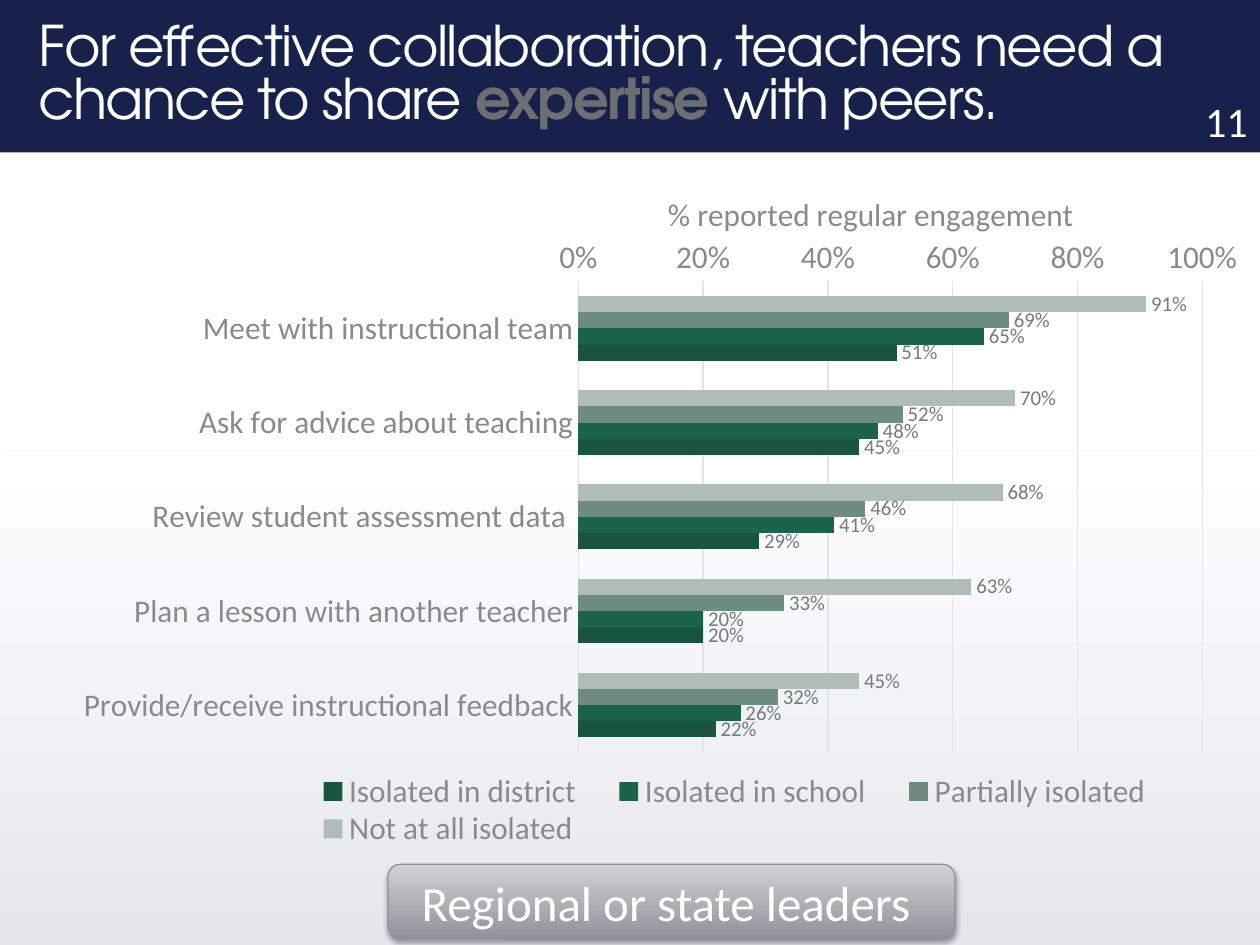
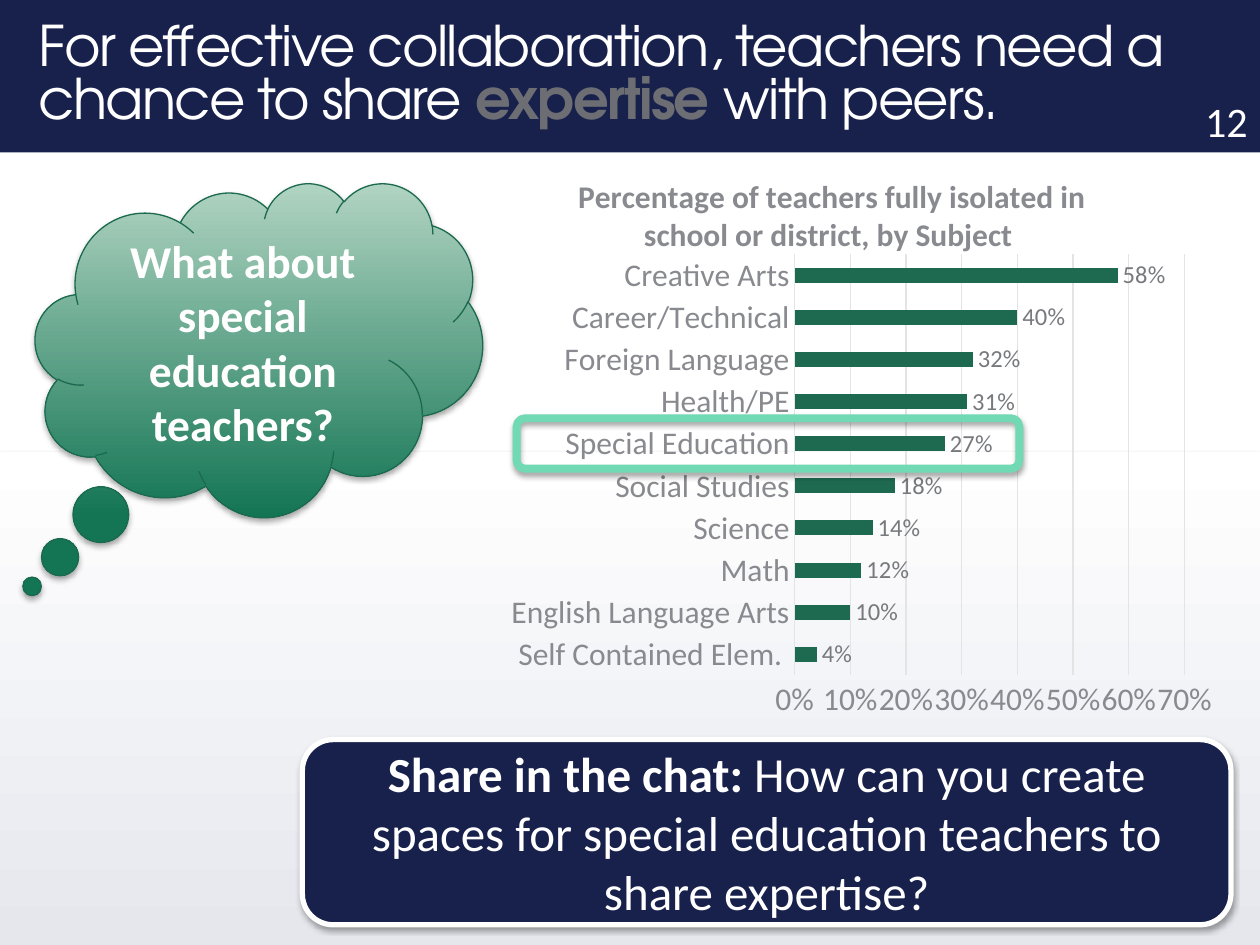
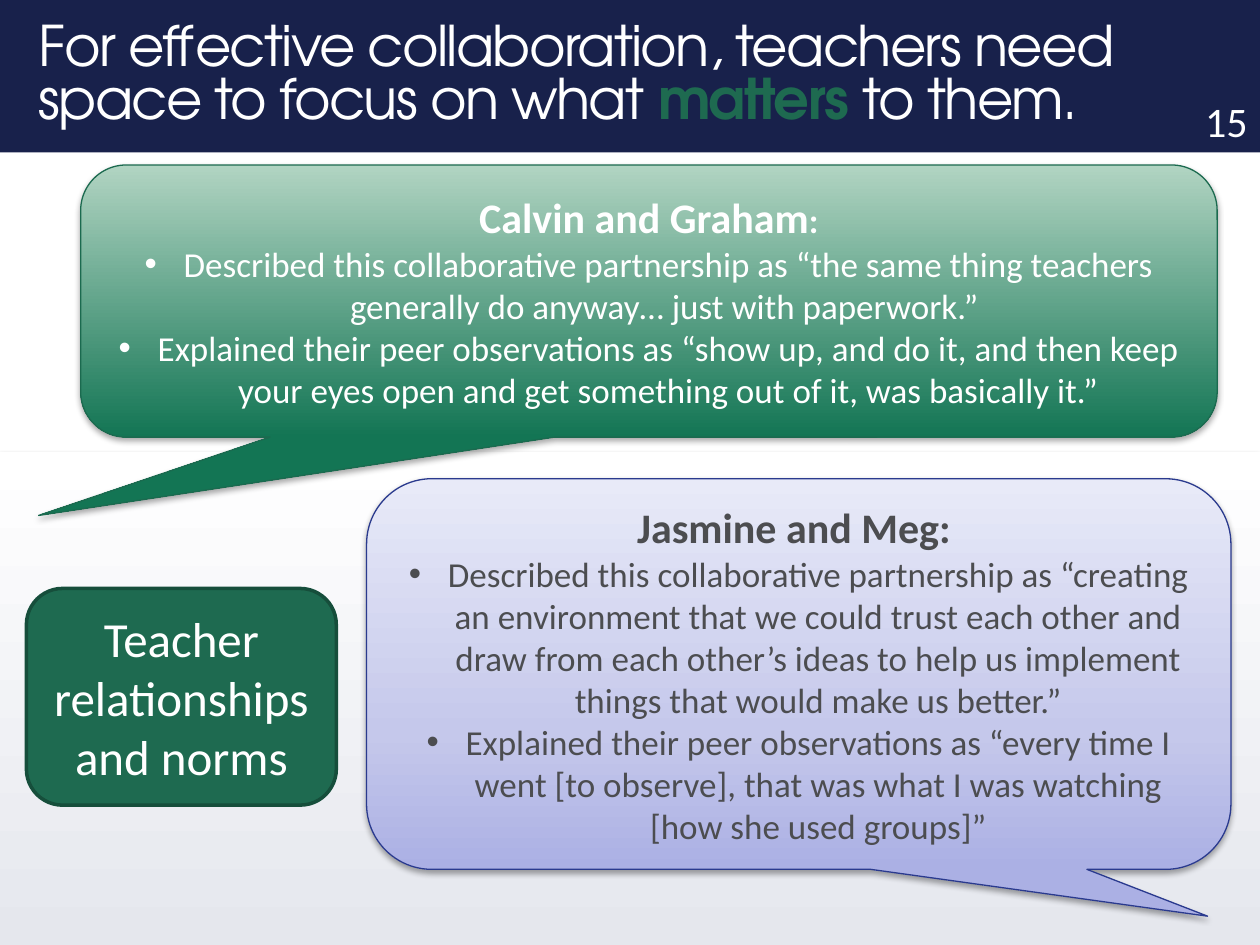
from lxml import etree
from pptx import Presentation
from pptx import util as u
from pptx.chart import data as chart_data
from pptx.dml import color as dml
from pptx.enum import chart as charts, shapes, text
from pptx.oxml import ns

COLORS = {
    "white": "FFFFFF", "mist": "E5E7ED", "navy": "18214B", "gray": "6D6E74",
    "green": "1E6A50", "green edge": "1B6A4F", "dark green": "164E3B",
    "deep green": "137554", "pale green": "B1D4C2", "mint": "72D9B5",
    "silver": "D0D1D6", "steel": "92939A", "steel edge": "909196",
    "pale lilac": "E8EAF8", "mid lilac": "C5C8EB", "lilac": "ABB0E4",
    "blue edge": "2A3A8E", "ink": "4C4D50", "axis": "898A8F",
    "label": "77797D", "grid": "E4E4E5", "not isolated": "B0BCB6",
    "partial": "6F8D7F", "school": "1C634B", "district": "18543F",
}
RGB = {name: dml.RGBColor.from_string(value) for name, value in COLORS.items()}
BODY_FONT, TITLE_FONT = "Calibri", "TeX Gyre Adventor"
SHAPE = shapes.MSO_SHAPE
CENTER, RIGHT = text.PP_ALIGN.CENTER, text.PP_ALIGN.RIGHT

# Slide size and a grid of 100 columns by 75 rows
presentation = Presentation()
presentation.slide_width, presentation.slide_height = u.Inches(10), u.Inches(7.5)
COLUMN = presentation.slide_width // 100
ROW = presentation.slide_height // 75


def add_box(slide, kind, at, fill=(), line=None, shadow=True, adjust=()):
    """Add a shape; fill lists (percent, colour) stops from top to bottom."""
    left, top, width, height = at
    shape = slide.shapes.add_shape(kind, int(left * COLUMN), int(top * ROW),
                                   int(width * COLUMN), int(height * ROW))
    for index, value in enumerate(adjust):
        shape.adjustments[index] = value
    if not fill:
        shape.fill.background()
    elif len(fill) == 1:
        shape.fill.solid()
        shape.fill.fore_color.rgb = RGB[fill[0][1]]
    else:
        shape.fill.gradient()
        shape.fill.gradient_angle = 270
        stops = shape._element.spPr.find(".//" + ns.qn("a:gsLst"))
        for stop in list(stops):
            stops.remove(stop)
        for percent, name in fill:
            stop = etree.SubElement(stops, ns.qn("a:gs"), pos=str(percent * 1000))
            etree.SubElement(stop, ns.qn("a:srgbClr"), val=COLORS[name])
    if line:
        shape.line.color.rgb, shape.line.width = RGB[line[0]], u.Pt(line[1])
    else:
        shape.line.fill.background()
    shape.shadow.inherit = False
    if shadow:
        effects = shape._element.spPr.find(ns.qn("a:effectLst"))
        outer = etree.SubElement(effects, ns.qn("a:outerShdw"), blurRad=str(u.Pt(3.1)),
                                 dist=str(u.Pt(1.8)), dir="5400000", rotWithShape="0")
        tint = etree.SubElement(outer, ns.qn("a:srgbClr"), val="000000")
        etree.SubElement(tint, ns.qn("a:alpha"), val="35000")
    return shape


def write(shape, paragraphs, size, color="white", font=BODY_FONT, align=CENTER):
    """Fill a shape; a paragraph is (bulleted, [(text, run settings), ...])."""
    frame = shape.text_frame
    frame.word_wrap = True
    frame.vertical_anchor = text.MSO_ANCHOR.MIDDLE
    for index, (bulleted, runs) in enumerate(paragraphs):
        paragraph = frame.add_paragraph() if index else frame.paragraphs[0]
        paragraph.alignment = align
        if bulleted:
            properties = paragraph._p.get_or_add_pPr()
            properties.set("marL", str(u.Inches(0.31)))
            properties.set("indent", str(-u.Inches(0.31)))
            etree.SubElement(properties, ns.qn("a:buFont"), typeface="Arial")
            etree.SubElement(properties, ns.qn("a:buChar"), char="•")
        paragraph.font.name, paragraph.font.size = font, u.Pt(size)
        paragraph.font.color.rgb = RGB[color]
        for words, settings in runs:
            run = paragraph.add_run()
            run.text = words
            if "size" in settings:
                run.font.size = u.Pt(settings["size"])
            if "color" in settings:
                run.font.color.rgb = RGB[settings["color"]]
            if "bold" in settings:
                run.font.bold = settings["bold"]


# Shared parts: lower gradient, title band, title and slide number
SHARE_TITLE = ("For effective collaboration, teachers need a chance to share ",
               "expertise ", "with peers.", "gray")
MATTERS_TITLE = ("For effective collaboration, teachers need space to focus on what ",
                 "matters", " to them.", "green")
slides = []
for number, (start, key_word, end, accent) in (
        ("11", SHARE_TITLE), ("12", SHARE_TITLE), ("15", MATTERS_TITLE)):
    slide = presentation.slides.add_slide(presentation.slide_layouts[6])
    slides.append(slide)
    add_box(slide, SHAPE.RECTANGLE, (0, 35.9, 100, 39.1), [(0, "white"), (100, "mist")])
    add_box(slide, SHAPE.RECTANGLE, (0, 0, 100, 12.1), [(0, "navy")], shadow=False)
    title = slide.shapes.add_textbox(int(2.1 * COLUMN), int(2.6 * ROW),
                                     int(97.9 * COLUMN), 7 * ROW)
    write(title, [(False, [(start, {}), (key_word, {"color": accent, "bold": True}),
                           (end, {})])],
          32, font=TITLE_FONT, align=text.PP_ALIGN.LEFT)
    title.text_frame.paragraphs[0].line_spacing = 0.8
    for run in title.text_frame.paragraphs[0].runs:
        run._r.get_or_add_rPr().set("spc", "-100")
    number_box = slide.shapes.add_textbox(int(76.7 * COLUMN), int(7.6 * ROW),
                                          int(23.3 * COLUMN), 4 * ROW)
    write(number_box, [(False, [(number, {})])], 24, align=RIGHT)
engagement_slide, subject_slide, norms_slide = slides

# Bar charts
engagement = {
    "slide": engagement_slide, "at": (2.1, 13.8, 96.1, 53.5),
    "categories": ["Meet with instructional team", "Ask for advice about teaching",
                   "Review student assessment data ",
                   "Plan a lesson with another teacher",
                   "Provide/receive instructional feedback"],
    "series": [("Not at all isolated", "not isolated", (0.91, 0.7, 0.68, 0.63, 0.45)),
               ("Partially isolated", "partial", (0.69, 0.52, 0.46, 0.33, 0.32)),
               ("Isolated in school", "school", (0.65, 0.48, 0.41, 0.2, 0.26)),
               ("Isolated in district", "district", (0.51, 0.45, 0.29, 0.2, 0.22))],
    "maximum": 1, "step": 0.2, "label size": 12, "reverse": True, "legend": True,
    "title": None, "axis title": "% reported regular engagement",
    "layouts": [("c:chart/c:plotArea", 0, (0.46, 0.16, 0.52, 0.7)),
                (".//c:valAx/c:title", 1, (0.53, 0.02)),
                (".//c:legend", 1, (0.22, 0.89, 0.74, 0.11))],
}
subjects = {
    "slide": subject_slide, "at": (38.3, 12.5, 59.4, 46.2),
    "categories": ["Self Contained Elem. ", "English Language Arts", "Math", "Science",
                   "Social Studies", "Special Education", "Health/PE",
                   "Foreign Language", "Career/Technical", "Creative Arts"],
    "series": [("Series 1", "green",
                (0.04, 0.1, 0.12, 0.14, 0.18, 0.27, 0.31, 0.32, 0.4, 0.58))],
    "maximum": 0.7, "step": 0.1, "label size": 14, "reverse": False, "legend": False,
    "title": "Percentage of teachers fully isolated in school or district, by Subject ",
    "axis title": None,
    "layouts": [("c:chart/c:plotArea", 0, (0.417, 0.166, 0.521, 0.724)),
                ("c:chart/c:title", 1, (0.12, 0.02))],
}
for plan in (engagement, subjects):
    numbers = chart_data.CategoryChartData(number_format="0%")
    numbers.categories = plan["categories"]
    for name, _, values in plan["series"]:
        numbers.add_series(name, values)
    left, top, width, height = plan["at"]
    chart = plan["slide"].shapes.add_chart(
        charts.XL_CHART_TYPE.BAR_CLUSTERED, int(left * COLUMN), int(top * ROW),
        int(width * COLUMN), int(height * ROW), numbers).chart
    chart.font.name, chart.font.size = BODY_FONT, u.Pt(10)
    chart.font.color.rgb = RGB["ink"]

    # Bars and their labels
    plot = chart.plots[0]
    plot.gap_width, plot.vary_by_categories = 182, False
    for series, (_, color, _) in zip(plot.series, plan["series"]):
        series.format.fill.solid()
        series.format.fill.fore_color.rgb = RGB[color]
        labels = series.data_labels
        labels.show_value, labels.number_format = True, "0%"
        labels.number_format_is_linked = False
        labels.position = charts.XL_LABEL_POSITION.OUTSIDE_END
        labels.font.name, labels.font.size = BODY_FONT, u.Pt(plan["label size"])
        labels.font.color.rgb = RGB["label"]

    # Axes
    category_axis, value_axis = chart.category_axis, chart.value_axis
    category_axis.reverse_order = plan["reverse"]
    category_axis.format.line.color.rgb = RGB["grid"]
    category_axis.format.line.width = u.Pt(0.75)
    value_axis.format.line.fill.background()
    value_axis.minimum_scale, value_axis.maximum_scale = 0, plan["maximum"]
    value_axis.major_unit = plan["step"]
    value_axis.tick_labels.number_format = "0%"
    value_axis.tick_labels.number_format_is_linked = False
    value_axis.major_gridlines.format.line.color.rgb = RGB["grid"]
    value_axis.major_gridlines.format.line.width = u.Pt(0.75)
    fonts = []
    for axis in (category_axis, value_axis):
        axis.major_tick_mark = axis.minor_tick_mark = charts.XL_TICK_MARK.NONE
        fonts.append(axis.tick_labels.font)

    # Titles and legend
    chart.has_title, chart.has_legend = bool(plan["title"]), plan["legend"]
    for owner, words, bold in ((chart, plan["title"], True),
                               (value_axis, plan["axis title"], False)):
        if words:
            heading = owner.chart_title if owner is chart else owner.axis_title
            heading.text_frame.text = words
            font = heading.text_frame.paragraphs[0].font
            font.bold = bold
            fonts.append(font)
    if plan["legend"]:
        chart.legend.position = charts.XL_LEGEND_POSITION.BOTTOM
        chart.legend.include_in_layout = False
        fonts.append(chart.legend.font)
    for font in fonts:
        font.name, font.size, font.color.rgb = BODY_FONT, u.Pt(18), RGB["axis"]

    # Places inside the chart, as shares of its size
    for target, position, shares in plan["layouts"]:
        parent = chart._chartSpace.xpath(target)[0]
        for old in parent.findall(ns.qn("c:layout")):
            parent.remove(old)
        layout = etree.Element(ns.qn("c:layout"))
        manual = etree.SubElement(layout, ns.qn("c:manualLayout"))
        if target.endswith("plotArea"):
            etree.SubElement(manual, ns.qn("c:layoutTarget"), val="inner")
        for tag in ("c:xMode", "c:yMode"):
            etree.SubElement(manual, ns.qn(tag), val="edge")
        for tag, share in zip(("c:x", "c:y", "c:w", "c:h"), shares):
            etree.SubElement(manual, ns.qn(tag), val=str(share))
        parent.insert(position, layout)

# Slide 11: audience button
audience = add_box(engagement_slide, SHAPE.ROUNDED_RECTANGLE, (30.8, 68.6, 45, 5.9),
                   [(0, "silver"), (100, "steel")], ("steel edge", 0.75))
write(audience, [(False, [("Regional or state leaders ", {})])], 28)

# Slide 12: thought cloud, chat prompt and highlighted row
GREEN_FADE = [(0, "pale green"), (100, "deep green")]
cloud = add_box(subject_slide, SHAPE.CLOUD_CALLOUT, (2.8, 14.5, 35.5, 26.5),
                GREEN_FADE, ("green edge", 0.75), adjust=(-0.507, 0.709))
write(cloud, [(False, [("What about special education teachers?", {"bold": True})])], 26)
prompt = add_box(subject_slide, SHAPE.ROUNDED_RECTANGLE, (24, 58.7, 73.7, 14.7),
                 [(0, "navy")], ("white", 3))
write(prompt, [(False, [
    ("Share in the chat: ", {"bold": True}),
    ("How can you create spaces for special education teachers to share expertise?", {}),
])], 28)
add_box(subject_slide, SHAPE.ROUNDED_RECTANGLE, (41, 33.2, 39.9, 4), line=("mint", 4.5))

# Slide 15: two speech bubbles and the topic box
HEADING = {"size": 24, "bold": True}
calvin = add_box(norms_slide, SHAPE.ROUNDED_RECTANGULAR_CALLOUT, (6.4, 13.1, 90.2, 21.6),
                 GREEN_FADE, ("green edge", 0.75), adjust=(-0.537, 0.788, 0.167))
write(calvin, [
    (False, [("Calvin and Graham", HEADING), (":", {"bold": True})]),
    (True, [("Described this collaborative partnership as “the same thing teachers "
             "generally do anyway… just with paperwork.” ", {})]),
    (True, [("Explained their peer observations as “show up, and do it, and then keep "
             "your eyes open and get something out of it, was basically it.”", {})]),
], 20)
jasmine = add_box(norms_slide, SHAPE.ROUNDED_RECTANGULAR_CALLOUT, (29.1, 38, 68.6, 31),
                  [(0, "pale lilac"), (65, "mid lilac"), (100, "lilac")],
                  ("blue edge", 0.75), adjust=(0.473, 0.62, 0.167))
write(jasmine, [
    (False, [("Jasmine and Meg: ", HEADING)]),
    (True, [("Described this collaborative partnership as “creating an environment that "
             "we could trust each other and draw from each other’s ideas to help us "
             "implement things that would make us better.”", {})]),
    (True, [("Explained their peer observations as “every time I went [to observe], that "
             "was what I was watching [how she used groups]”", {})]),
], 20, "ink")
topic = add_box(norms_slide, SHAPE.ROUNDED_RECTANGLE, (2.1, 46.7, 24.6, 17.2),
                [(0, "green")], ("dark green", 2), shadow=False)
write(topic, [(False, [("Teacher relationships and norms", {})])], 28)

presentation.save("out.pptx")
